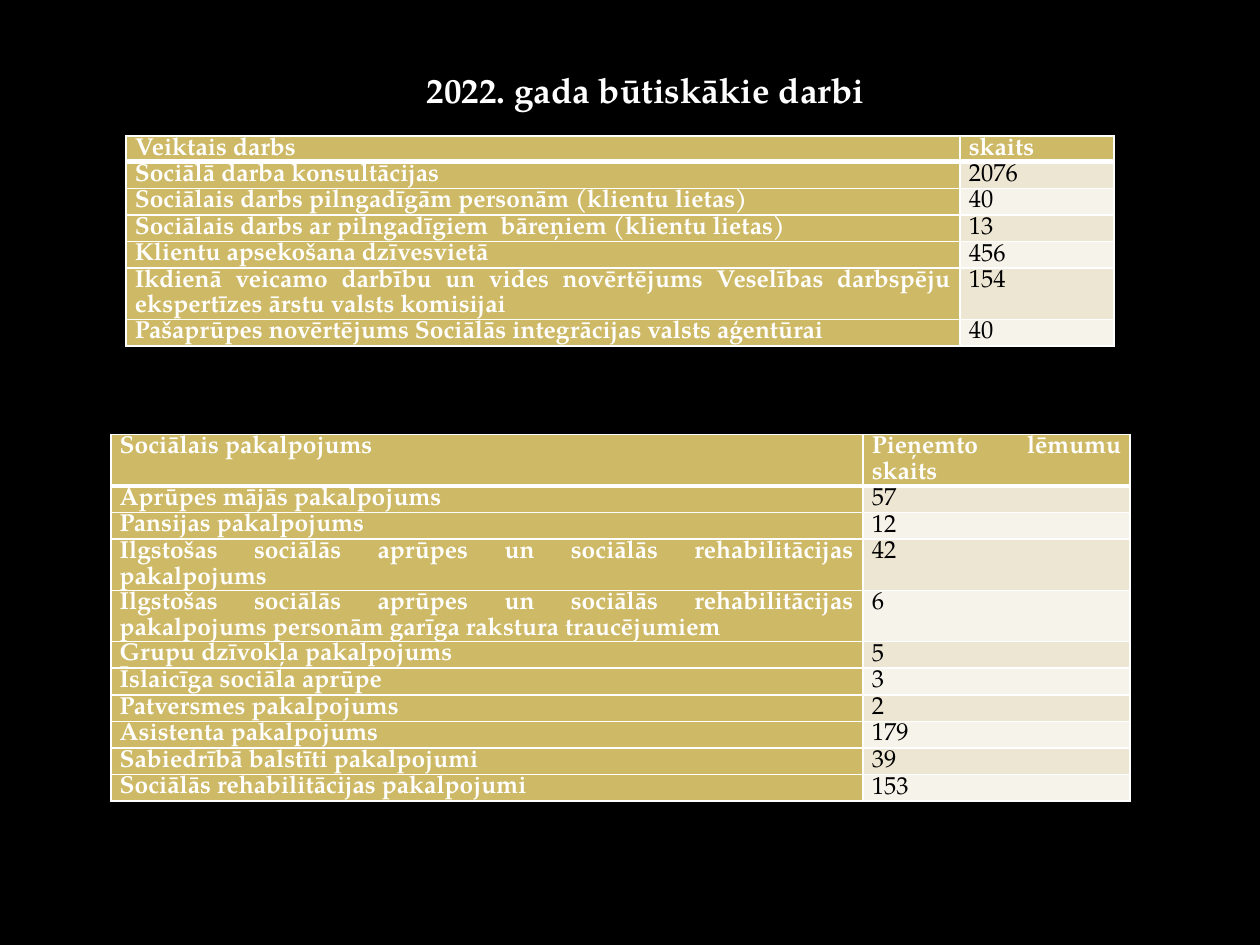
from lxml.etree import SubElement
from pptx import Presentation
from pptx.dml.color import RGBColor
from pptx.enum.text import MSO_ANCHOR as Anchor, MSO_AUTO_SIZE as AutoSize, PP_ALIGN as Align
from pptx.oxml.ns import qn
from pptx.util import Inches, Pt

WORK = [
    ("Veiktais darbs", "skaits"),
    ("Sociālā darba konsultācijas", "2076"),
    ("Sociālais darbs pilngadīgām personām (klientu lietas)", "40"),
    ("Sociālais darbs ar pilngadīgiem  bāreņiem (klientu lietas)", "13"),
    ("Klientu apsekošana dzīvesvietā", "456"),
    ("Ikdienā veicamo darbību un vides novērtējums Veselības darbspēju "
     "ekspertīzes ārstu valsts komisijai", "154"),
    ("Pašaprūpes novērtējums Sociālās integrācijas valsts aģentūrai", "40"),
]
SERVICES = [
    ("Sociālais pakalpojums", "Pieņemto lēmumu skaits"),
    ("Aprūpes mājās pakalpojums", "57"),
    ("Pansijas pakalpojums", "12"),
    ("Ilgstošas sociālās aprūpes un sociālās rehabilitācijas pakalpojums", "42"),
    ("Ilgstošas sociālās aprūpes un sociālās rehabilitācijas pakalpojums "
     "personām garīga rakstura traucējumiem", "6"),
    ("Grupu dzīvokļa pakalpojums", "5"),
    ("Īslaicīga sociāla aprūpe", "3"),
    ("Patversmes pakalpojums", "2"),
    ("Asistenta pakalpojums", "179"),
    ("Sabiedrībā balstīti pakalpojumi", "39"),
    ("Sociālās rehabilitācijas pakalpojumi", "153"),
]


def color(value):
    return RGBColor.from_string(value)


class ReportSlide:
    """Hold the style and the current slide of the yearly report."""

    font = "TeX Gyre Pagella"
    black, white, gold = "000000", "FFFFFF", "CEB966"
    bands = ("F6F3EA", "EDE6D3")
    row_height = 0.2

    def __init__(self, deck):
        self.page = deck.slides.add_slide(deck.slide_layouts[5])
        fill = self.page.background.fill
        fill.solid()
        fill.fore_color.rgb = color(self.black)

    def set_text(self, frame, text, size, ink, bold, align, spacing):
        frame.text = text
        para = frame.paragraphs[0]
        para.alignment = align
        para.line_spacing = spacing
        font = para.runs[0].font
        font.name, font.size, font.bold = self.font, Pt(size), bold
        font.color.rgb = color(ink)
        return para

    def title(self, text, left, top, width, height):
        box = self.page.shapes.title
        box.left, box.top = Inches(left), Inches(top)
        box.width, box.height = Inches(width), Inches(height)
        frame = box.text_frame
        frame.word_wrap = True
        frame.auto_size = AutoSize.NONE
        frame.vertical_anchor = Anchor.TOP
        para = self.set_text(frame, text, 20, self.white, True, Align.CENTER, 1.5)
        para.space_before = Pt(0)

    def borders(self, cell, row):
        properties = cell._tc.get_or_add_tcPr()
        widths = {"L": 1, "R": 1, "T": 3 if row == 1 else 1, "B": 3 if row == 0 else 1}
        for side, width in widths.items():
            line = SubElement(properties, qn(f"a:ln{side}"), w=str(Pt(width)))
            fill = SubElement(line, qn("a:solidFill"))
            SubElement(fill, qn("a:srgbClr"), val=self.white)

    def cell(self, cell, text, row, column):
        heading = row == 0 or column == 0
        self.borders(cell, row)
        cell.fill.solid()
        cell.fill.fore_color.rgb = color(self.gold if heading else self.bands[row % 2])
        cell.margin_left = cell.margin_right = Inches(0.07)
        cell.margin_top = cell.margin_bottom = 0
        ink = self.white if heading else self.black
        para = self.set_text(cell.text_frame, text, 14, ink, heading, Align.JUSTIFY, 1.07)
        para.space_after = Pt(8)

    def table(self, rows, left, top, widths):
        table = self.page.shapes.add_table(
            len(rows), len(widths), Inches(left), Inches(top),
            Inches(sum(widths)), Inches(self.row_height * len(rows))).table
        for column, width in zip(table.columns, widths):
            column.width = Inches(width)
        for row, texts in enumerate(rows):
            for column, text in enumerate(texts):
                self.cell(table.cell(row, column), text, row, column)


def main():
    deck = Presentation()
    deck.slide_width, deck.slide_height = Inches(10), Inches(7.5)
    report = ReportSlide(deck)
    report.title("2022. gada būtiskākie darbi", 0.5, 0.33, 9.25, 6.5)
    report.table(SERVICES, 0.88, 3.45, (5.97, 2.12))
    report.table(WORK, 1, 1.08, (6.62, 1.22))
    deck.save("out.pptx")


if __name__ == "__main__":
    main()
